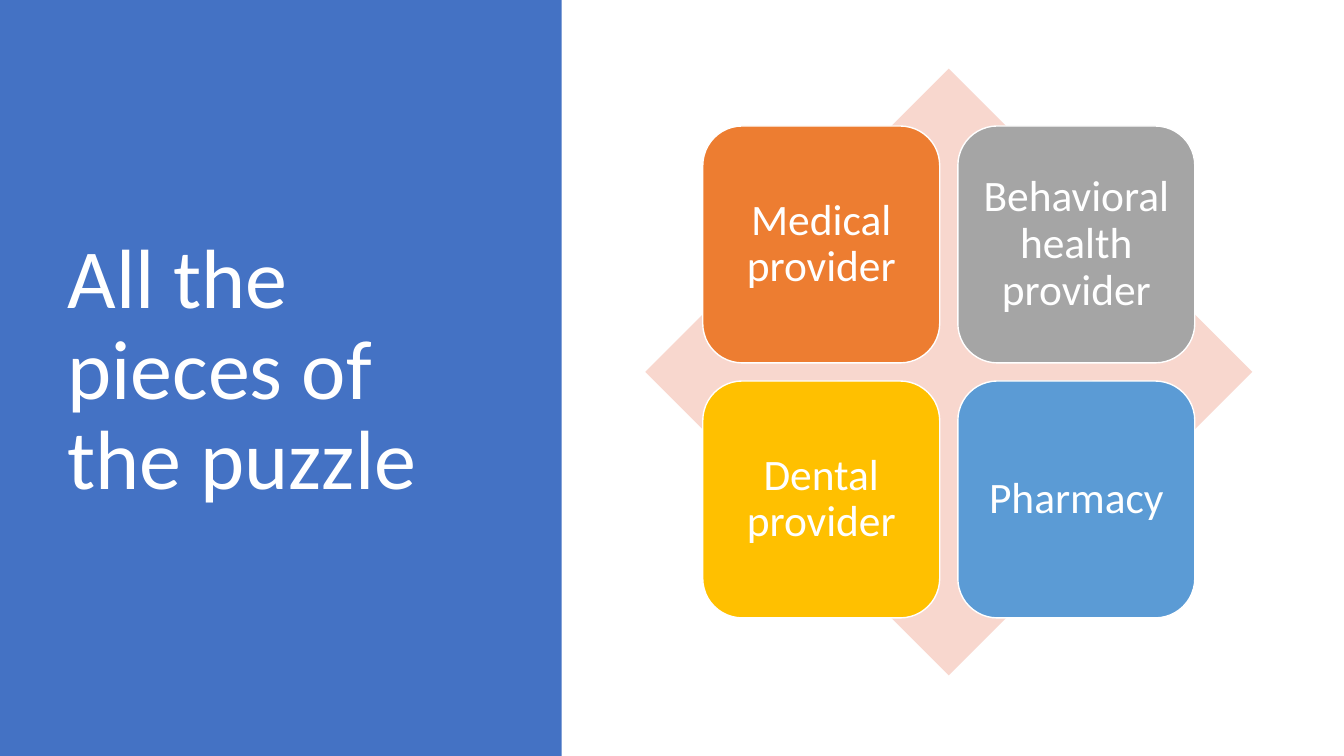
from pptx import Presentation
from pptx.dml.color import RGBColor
from pptx.enum.shapes import MSO_SHAPE
from pptx.enum.text import MSO_ANCHOR, MSO_AUTO_SIZE, PP_ALIGN
from pptx.util import Pt

RECT = MSO_SHAPE.RECTANGLE
DIAMOND = MSO_SHAPE.DIAMOND
ROUND = MSO_SHAPE.ROUNDED_RECTANGLE
MIDDLE = MSO_ANCHOR.MIDDLE
NO_FIT = MSO_AUTO_SIZE.NONE
LEFT, CENTER = PP_ALIGN.LEFT, PP_ALIGN.CENTER

PX = 9144  # EMU, 100 px to the inch
WIDTH, HEIGHT = 1333, 750
TITLE_ONLY = 5
COLORS = {
    "white": "FFFFFF",
    "blue": "4472C4",
    "pink": "F8D7CE",
    "orange": "ED7D31",
    "gray": "A5A5A5",
    "gold": "FFC000",
    "sky": "5B9BD5",
}
PIECES = [
    ("Medical provider", "orange"),
    ("Behavioral health provider", "gray"),
    ("Dental provider", "gold"),
    ("Pharmacy", "sky"),
]


class Deck:
    font = "Calibri"

    def __init__(self):
        self.show = Presentation()
        self.show.slide_width = WIDTH * PX
        self.show.slide_height = HEIGHT * PX
        layout = self.show.slide_layouts[TITLE_ONLY]
        self.slide = self.show.slides.add_slide(layout)

    def color(self, name):
        return RGBColor.from_string(COLORS[name])

    def label(self, shape, text, size, align, inset):
        frame = shape.text_frame
        frame.text = text
        frame.word_wrap = True
        frame.auto_size = NO_FIT
        frame.vertical_anchor = MIDDLE
        frame.margin_left = frame.margin_right = inset[0] * PX
        frame.margin_top = frame.margin_bottom = inset[1] * PX
        para = frame.paragraphs[0]
        para.alignment = align
        para.line_spacing = 0.9
        para.font.name = self.font
        para.font.size = Pt(size)
        para.font.color.rgb = self.color("white")

    def title(self, text, left, top, width, height):
        title = self.slide.shapes.title
        title.left, title.top = left * PX, top * PX
        title.width, title.height = width * PX, height * PX
        self.label(title, text, 60, LEFT, (10, 5))

    def shape(self, kind, fill, left, top, width, height):
        shape = self.slide.shapes.add_shape(
            kind, left * PX, top * PX, width * PX, height * PX)
        shape.shadow.inherit = False
        shape.fill.solid()
        shape.fill.fore_color.rgb = self.color(fill)
        shape.line.fill.background()
        return shape

    def panel(self, fill, width):
        """Add a full-height block of colour behind the title."""
        panel = self.shape(RECT, fill, 0, 0, width, HEIGHT)
        self.slide.shapes.title.element.addprevious(panel.element)

    def tile(self, text, fill, left, top, side):
        tile = self.shape(ROUND, fill, left, top, side, side)
        tile.line.color.rgb = self.color("white")
        tile.line.width = Pt(1)
        self.label(tile, text, 31, CENTER, (13, 13))


def main():
    deck = Deck()
    deck.panel("blue", 557)
    deck.title("All the pieces of the puzzle", 57, 68, 416, 602)
    deck.shape(DIAMOND, "pink", 640, 68, 602, 602)
    side, step = 235, 253
    for i, (text, fill) in enumerate(PIECES):
        row, col = divmod(i, 2)
        deck.tile(text, fill, 697 + col * step, 125 + row * step, side)
    deck.show.save("out.pptx")


if __name__ == "__main__":
    main()
